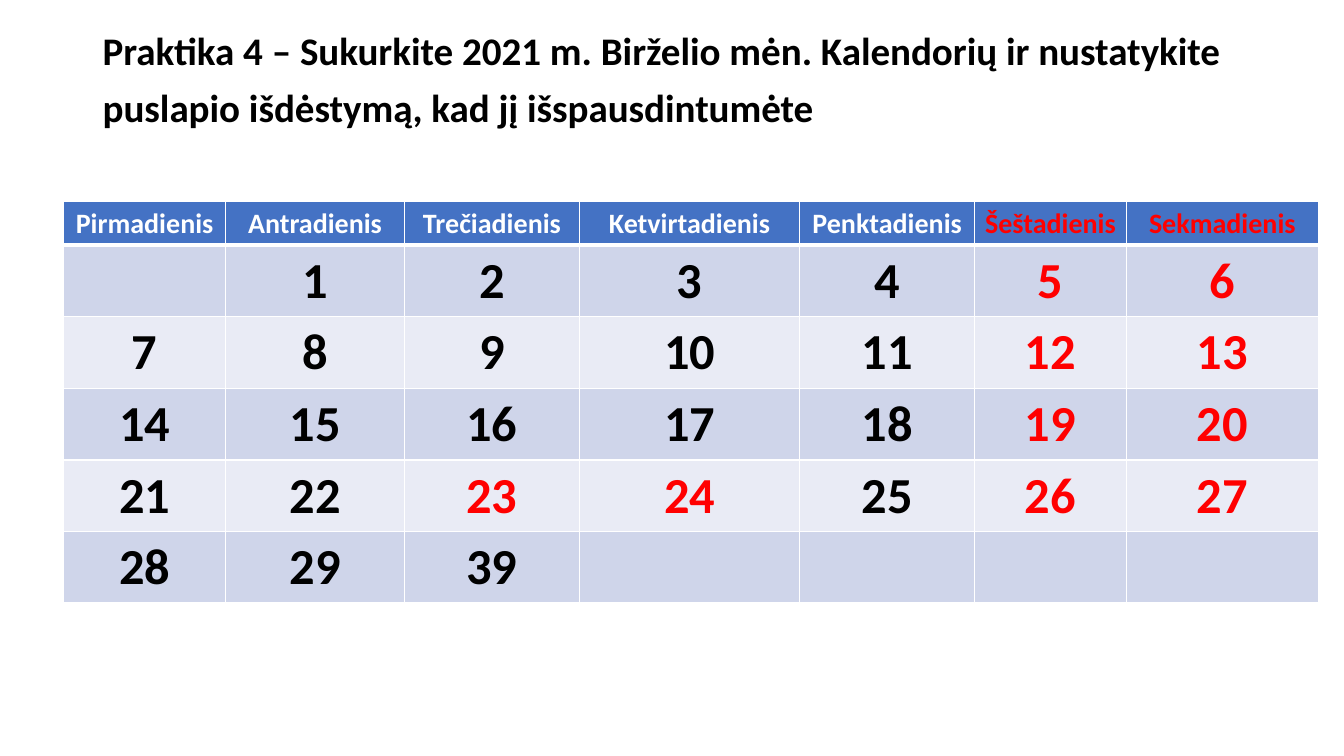
from dataclasses import dataclass

from lxml.etree import SubElement
from pptx import Presentation
from pptx.dml.color import RGBColor
from pptx.enum.text import MSO_ANCHOR, PP_ALIGN
from pptx.oxml.ns import qn
from pptx.slide import Slide
from pptx.table import _Cell
from pptx.text.text import _Paragraph
from pptx.util import Inches, Pt


@dataclass(frozen=True)
class Theme:
    font: str = "Calibri"
    ink: str = "000000"
    white: str = "FFFFFF"
    holiday: str = "FF0000"
    header_fill: str = "4472C4"
    week_fills: tuple[str, str] = ("CFD5EA", "E9EBF5")
    title_size: float = 27.9
    title_end_size: float = 39.6
    weekday_size: float = 20
    day_size: float = 36
    thin_line: float = 1
    header_line: float = 3


@dataclass(frozen=True)
class Weekday:
    name: str
    width: float
    weekend: bool = False


THEME = Theme()
TITLE = (
    "Praktika 4 – Sukurkite 2021 m. Birželio mėn. Kalendorių ir nustatykite "
    "puslapio išdėstymą, kad jį išspausdintumėte"
)
WEEKDAYS = [
    Weekday("Pirmadienis", 1.61),
    Weekday("Antradienis", 1.77),
    Weekday("Trečiadienis", 1.74),
    Weekday("Ketvirtadienis", 2.18),
    Weekday("Penktadienis", 1.74),
    Weekday("Šeštadienis", 1.5, weekend=True),
    Weekday("Sekmadienis", 1.91, weekend=True),
]
DAYS = ["", *map(str, range(1, 30)), "39", "", "", "", ""]
PUBLIC_HOLIDAYS = {"23", "24"}
HEADER_HEIGHT, WEEK_HEIGHT = 0.43, 0.71


def add_text(paragraph: _Paragraph, text: str, *, size: float, color: str,
             bold: bool = True) -> None:
    run = paragraph.add_run()
    run.text = text
    run.font.name = THEME.font
    run.font.size = Pt(size)
    run.font.bold = bold
    run.font.color.rgb = RGBColor.from_string(color)


def add_borders(cell: _Cell, *, top: float, bottom: float) -> None:
    """Draw white edges; must run before the cell is filled."""
    properties = cell._tc.get_or_add_tcPr()
    edges = {"L": THEME.thin_line, "R": THEME.thin_line, "T": top, "B": bottom}
    for side, width in edges.items():
        line = SubElement(properties, qn(f"a:ln{side}"), w=str(Pt(width)))
        fill = SubElement(line, qn("a:solidFill"))
        SubElement(fill, qn("a:srgbClr"), val=THEME.white)


def style_cell(cell: _Cell, text: str, *, size: float, color: str, fill: str,
               anchor: MSO_ANCHOR, top: float, bottom: float) -> None:
    add_borders(cell, top=top, bottom=bottom)
    cell.fill.solid()
    cell.fill.fore_color.rgb = RGBColor.from_string(fill)
    cell.vertical_anchor = anchor
    paragraph = cell.text_frame.paragraphs[0]
    paragraph.alignment = PP_ALIGN.CENTER
    if text:
        add_text(paragraph, text, size=size, color=color)


def add_title(slide: Slide) -> None:
    frame = slide.shapes.add_textbox(
        Inches(0.92), Inches(0.22), Inches(11.5), Inches(1.21)).text_frame
    frame.word_wrap = True
    frame.vertical_anchor = MSO_ANCHOR.MIDDLE
    paragraph = frame.paragraphs[0]
    paragraph.line_spacing = 0.9
    add_text(paragraph, TITLE, size=THEME.title_size, color=THEME.ink)
    # The larger closing space sets the height of the last line.
    add_text(paragraph, " ", size=THEME.title_end_size, color=THEME.ink)


def add_calendar(slide: Slide) -> None:
    week_count = len(DAYS) // len(WEEKDAYS)
    calendar = slide.shapes.add_table(
        week_count + 1, len(WEEKDAYS), Inches(0.63), Inches(2), Inches(12.44),
        Inches(HEADER_HEIGHT + week_count * WEEK_HEIGHT)).table
    for row in calendar.rows:
        row.height = Inches(WEEK_HEIGHT)
    calendar.rows[0].height = Inches(HEADER_HEIGHT)

    for column, weekday in enumerate(WEEKDAYS):
        calendar.columns[column].width = Inches(weekday.width)
        style_cell(
            calendar.cell(0, column), weekday.name, size=THEME.weekday_size,
            color=THEME.holiday if weekday.weekend else THEME.white,
            fill=THEME.header_fill, anchor=MSO_ANCHOR.TOP,
            top=THEME.thin_line, bottom=THEME.header_line)

    for position, day in enumerate(DAYS):
        week, column = divmod(position, len(WEEKDAYS))
        day_off = WEEKDAYS[column].weekend or day in PUBLIC_HOLIDAYS
        style_cell(
            calendar.cell(week + 1, column), day, size=THEME.day_size,
            color=THEME.holiday if day_off else THEME.ink,
            fill=THEME.week_fills[week % 2], anchor=MSO_ANCHOR.MIDDLE,
            top=THEME.thin_line if week else THEME.header_line,
            bottom=THEME.thin_line)


def main() -> None:
    presentation = Presentation()
    presentation.slide_width = Inches(13.33)
    presentation.slide_height = Inches(7.5)
    slide = presentation.slides.add_slide(presentation.slide_layouts[6])
    add_title(slide)
    add_calendar(slide)
    presentation.save("out.pptx")


if __name__ == "__main__":
    main()
